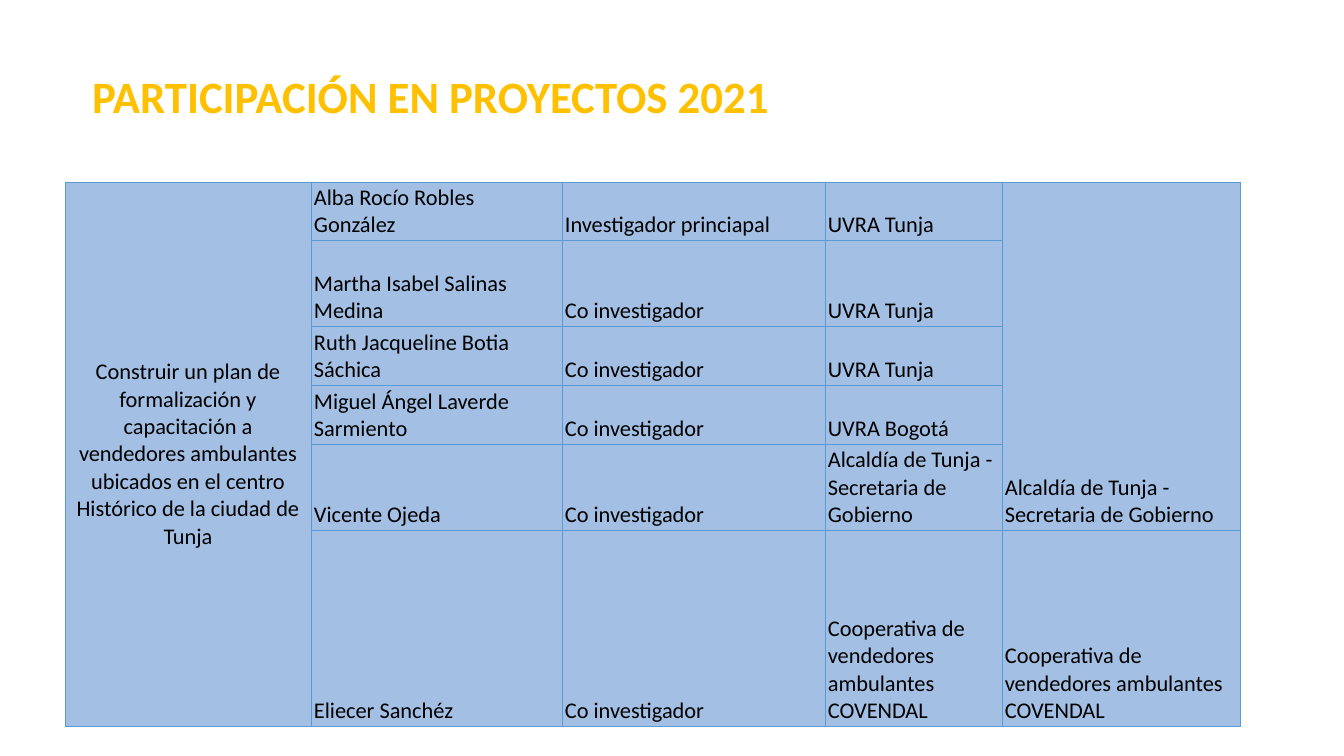
from dataclasses import dataclass

from lxml.etree import SubElement
from pptx import Presentation
from pptx.dml.color import RGBColor
from pptx.enum.text import MSO_ANCHOR as Anchor, MSO_AUTO_SIZE as AutoSize, PP_ALIGN as Align
from pptx.oxml.ns import qn
from pptx.util import Emu, Pt

# Content
TITLE = "PARTICIPACIÓN EN PROYECTOS 2021"
PROJECT = ("Construir un plan de formalización y capacitación a vendedores ambulantes "
           "ubicados en el centro Histórico de la ciudad de Tunja")
CITY_HALL = "Alcaldía de Tunja - Secretaria de Gobierno"
COOPERATIVE = "Cooperativa de vendedores ambulantes COVENDAL"
LEAD, PARTNER = "Investigador princiapal", "Co investigador"
MEMBERS = [
    ("Alba Rocío Robles González", LEAD, "UVRA Tunja"),
    ("Martha Isabel Salinas Medina", PARTNER, "UVRA Tunja"),
    ("Ruth Jacqueline Botia Sáchica", PARTNER, "UVRA Tunja"),
    ("Miguel Ángel Laverde Sarmiento", PARTNER, "UVRA Bogotá"),
    ("Vicente Ojeda", PARTNER, CITY_HALL),
    ("Eliecer Sanchéz", PARTNER, COOPERATIVE),
]

# Layout in px
SLIDE = (1344, 756)
TITLE_BOX = (82, 64, 929, 65)
TABLE_LEFT, TABLE_TOP = 65, 182
COLUMNS = (246, 251, 263, 177, 238)
ROWS = (58, 86, 58, 59, 85, 196)
INSET_X, INSET_Y = 3, 2


@dataclass(frozen=True)
class Theme:
    font: str = "Calibri"
    title: RGBColor = RGBColor(0xFF, 0xC0, 0x00)
    text: RGBColor = RGBColor(0, 0, 0)
    cell: RGBColor = RGBColor(0xA3, 0xC0, 0xE4)
    border: str = "5B9BD5"
    title_size: int = 32
    text_size: int = 16
    border_width: float = 0.5


THEME = Theme()


def px(length):
    return Emu(round(length * 914400 / 100.8))


def write(frame, text, size, color, bold=False, align=Align.LEFT):
    paragraph = frame.paragraphs[0]
    paragraph.alignment = align
    run = paragraph.add_run()
    run.text = text
    font = run.font
    font.name, font.size, font.bold = THEME.font, Pt(size), bold
    font.color.rgb = color


def style_cell(cell):
    cell.margin_left = cell.margin_right = px(INSET_X)
    cell.margin_top = cell.margin_bottom = px(INSET_Y)
    cell.vertical_anchor = Anchor.BOTTOM
    properties = cell._tc.get_or_add_tcPr()
    for side in ("a:lnL", "a:lnR", "a:lnT", "a:lnB"):
        line = SubElement(properties, qn(side), w=str(Pt(THEME.border_width)))
        SubElement(SubElement(line, qn("a:solidFill")), qn("a:srgbClr"), val=THEME.border)
    cell.fill.solid()
    cell.fill.fore_color.rgb = THEME.cell


def add_title(slide):
    title = slide.shapes.title
    title.left, title.top, title.width, title.height = map(px, TITLE_BOX)
    frame = title.text_frame
    frame.word_wrap = True
    frame.auto_size = AutoSize.NONE
    frame.vertical_anchor = Anchor.TOP
    write(frame, TITLE, THEME.title_size, THEME.title, bold=True)


def add_members(slide):
    members = slide.shapes.add_table(
        len(ROWS), len(COLUMNS), px(TABLE_LEFT), px(TABLE_TOP),
        px(sum(COLUMNS)), px(sum(ROWS))).table
    for column, width in zip(members.columns, COLUMNS):
        column.width = px(width)
    for row, height in zip(members.rows, ROWS):
        row.height = px(height)
    for cell in members.iter_cells():
        style_cell(cell)

    # Project and partner cells span several rows
    last_row, last_column = len(ROWS) - 1, len(COLUMNS) - 1
    project = members.cell(0, 0)
    project.merge(members.cell(last_row, 0))
    project.vertical_anchor = Anchor.MIDDLE
    write(project.text_frame, PROJECT, THEME.text_size, THEME.text, align=Align.CENTER)
    members.cell(0, last_column).merge(members.cell(last_row - 1, last_column))

    entries = {(r, c): text for r, member in enumerate(MEMBERS)
               for c, text in enumerate(member, start=1)}
    entries[0, last_column] = CITY_HALL
    entries[last_row, last_column] = COOPERATIVE
    for position, text in entries.items():
        write(members.cell(*position).text_frame, text, THEME.text_size, THEME.text)


def main():
    deck = Presentation()
    deck.slide_width, deck.slide_height = map(px, SLIDE)
    slide = deck.slides.add_slide(deck.slide_layouts.get_by_name("Title Only"))
    add_members(slide)
    add_title(slide)
    deck.save("out.pptx")


if __name__ == "__main__":
    main()
